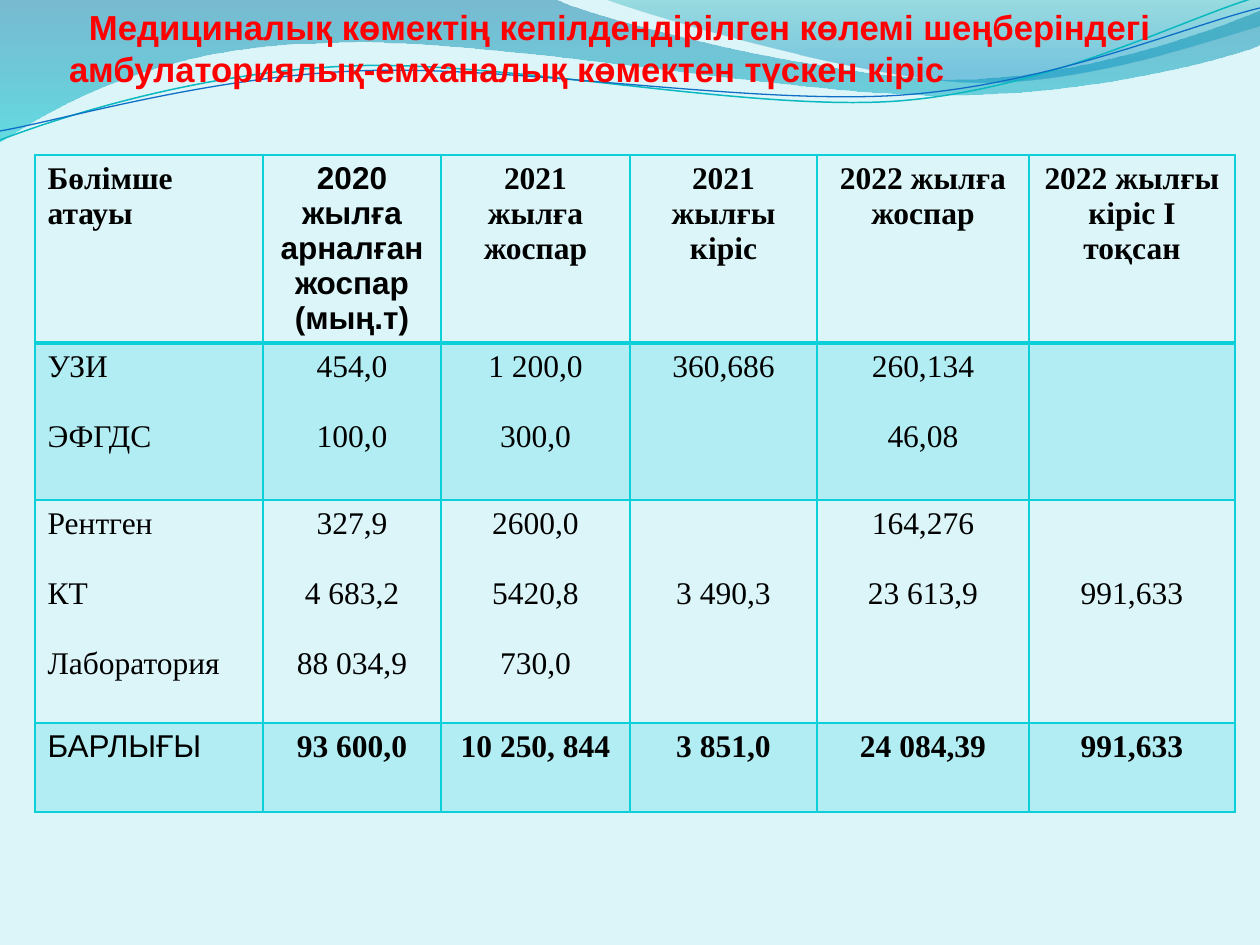
from lxml.etree import SubElement
from pptx import Presentation
from pptx.dml.color import RGBColor
from pptx.enum.text import MSO_ANCHOR, MSO_AUTO_SIZE, PP_ALIGN
from pptx.oxml import parse_xml
from pptx.oxml.ns import nsdecls, qn
from pptx.util import Emu, Pt

PX = 914400 / 126
COLORS = {"bg": "DBF5F9", "title": "FF0000", "text": "000000", "grid": "0BD0D9",
          "teal": "0AB8BF", "blue": "0F6FC6"}


def px(n):
    return Emu(round(n * PX))


def set_opacity(el, percents):
    """Give each colour in el, in order, its opacity in percent."""
    for clr, pct in zip(el.iter(qn("a:srgbClr")), percents):
        SubElement(clr, qn("a:alpha")).set("val", str(pct * 1000))


prs = Presentation()
prs.slide_width, prs.slide_height = px(1260), px(945)
s = prs.slides.add_slide(prs.slide_layouts[5])
s.background.fill.solid()
s.background.fill.fore_color.rgb = RGBColor.from_string(COLORS["bg"])

# Waves: a step of one point is a line, a step of three is a Bezier curve.
# A gradient stop is position, colour, opacity.
waves = [
    {"start": (0, 0), "stops": [(0, "0074A1", 45), (1, "00C6CF", 55)],
     "steps": [[(554, -1)],
               [(600, 21), (837, 79), (955, 79)],
               [(1075, 79), (1207, 33), (1260, 11)],
               [(1261, 45)],
               [(1239, 55), (1096, 96), (940, 95)],
               [(784, 95), (481, 35), (324, 43)],
               [(161, 45), (58, 105), (-1, 142)],
               [(0, 0)]]},
    {"start": (604, -1), "stops": [(0, "00A1A9", 30), (0.8, "008BBF", 45)],
     "steps": [[(641, 14), (859, 78), (969, 82)],
               [(1079, 86), (1211, 40), (1260, 26)],
               [(1260, 0)],
               [(604, -1)]]},
    {"start": (0, 140), "line": ("teal", 0.85),
     "steps": [[(60, 117), (199, 72), (349, 66)],
               [(498, 59), (747, 112), (898, 101)],
               [(1050, 89), (1182, 19), (1257, -3)]]},
    {"start": (0, 131), "line": ("blue", 0.75),
     "steps": [[(59, 121), (207, 77), (357, 71)],
               [(508, 64), (752, 106), (903, 95)],
               [(1053, 84), (1186, 26), (1260, 8)]]},
]
for wave in waves:
    builder = s.shapes.build_freeform(*map(px, wave["start"]))
    builder.add_line_segments([(px(x), px(y)) for step in wave["steps"] for x, y in step],
                              close="stops" in wave)
    sp = builder.convert_to_shape()
    sp.shadow.inherit = False

    # Join the three lines of each curve step into one Bezier segment
    segments = iter(list(sp._element.iter(qn("a:lnTo"))))
    for step in wave["steps"]:
        first, *others = [next(segments) for _ in step]
        if others:
            first.tag = qn("a:cubicBezTo")
        for other in others:
            first.append(other[0])
            other.getparent().remove(other)

    if "stops" in wave:
        sp.fill.gradient()
        sp.fill.gradient_angle = 270
        for stop, (position, color, _) in zip(sp.fill.gradient_stops, wave["stops"]):
            stop.position = position
            stop.color.rgb = RGBColor.from_string(color)
        set_opacity(sp._element.spPr, [opacity for *_, opacity in wave["stops"]])
        sp.line.fill.background()
    else:
        color, width = wave["line"]
        sp.fill.background()
        sp.line.color.rgb = RGBColor.from_string(COLORS[color])
        sp.line.width = Pt(width)

# Title, in front of the waves
title = s.shapes.title
s.shapes._spTree.append(title._element)
title.left, title.top, title.width, title.height = px(69), px(39), px(1103), px(126)
tf = title.text_frame
tf.text = ("Медициналық көмектің кепілдендірілген көлемі шеңберіндегі "
           "амбулаториялық-емханалық көмектен түскен кіріс")
frame_format = {"word_wrap": True, "auto_size": MSO_AUTO_SIZE.NONE,
                "vertical_anchor": MSO_ANCHOR.BOTTOM, "margin_left": 0,
                "margin_right": 0, "margin_top": 0, "margin_bottom": px(75)}
for name, value in frame_format.items():
    setattr(tf, name, value)
p = tf.paragraphs[0]
p.alignment, p.line_spacing = PP_ALIGN.LEFT, Pt(24)
p._p.get_or_add_pPr().set("indent", str(px(20)))
for name, value in {"name": "Arial", "size": Pt(19.8), "bold": True}.items():
    setattr(p.font, name, value)
p.font.color.rgb = RGBColor.from_string(COLORS["title"])

# Table: a list in a cell is one entry per service, "" where there is no value
rows = [
    ["Бөлімше атауы", "2020 жылға арналған жоспар (мың.т)", "2021 жылға жоспар",
     "2021 жылғы кіріс", "2022 жылға жоспар", "2022 жылғы кіріс I тоқсан"],
    [["УЗИ", "ЭФГДС"], ["454,0", "100,0"], ["1 200,0", "300,0"], "360,686",
     ["260,134", "46,08"], ""],
    [["Рентген", "КТ", "Лаборатория"], ["327,9", "4 683,2", "88 034,9"],
     ["2600,0", "5420,8", "730,0"], ["", "3 490,3"], ["164,276", "23 613,9"],
     ["", "991,633"]],
    ["БАРЛЫҒЫ", "93 600,0", "10 250, 844", "3 851,0", "24 084,39", "991,633"],
]
col_widths = [228, 178, 189, 187, 212, 206]
row_heights = [188, 157, 223, 89]
arial_cells = {(0, 1), (3, 0)}
LINE = 35

table = s.shapes.add_table(len(rows), len(col_widths), px(35), px(155),
                           px(sum(col_widths)), px(sum(row_heights))).table
table.first_row = table.horz_banding = False
for col, width in zip(table.columns, col_widths):
    col.width = px(width)
for row, height in zip(table.rows, row_heights):
    row.height = px(height)

for i, row in enumerate(rows):
    for j, content in enumerate(row):
        cell = table.cell(i, j)
        entries = content if isinstance(content, list) else [content]
        if entries[0] == "" and len(entries) > 1:
            cell.margin_top = px(6 + 2 * LINE)
        cell.text = "\n".join(entry for entry in entries if entry)
        for k, p in enumerate(cell.text_frame.paragraphs):
            p.alignment = PP_ALIGN.CENTER if j else PP_ALIGN.LEFT
            p.line_spacing = px(LINE)
            p.space_before = px(LINE if k else 0)
            font_format = {"name": "Arial" if (i, j) in arial_cells else "Times New Roman",
                           "size": Pt(18), "bold": i == 0 or (i == 3 and j > 0)}
            for name, value in font_format.items():
                setattr(p.font, name, value)
            p.font.color.rgb = RGBColor.from_string(COLORS["text"])
        tcPr = cell._tc.get_or_add_tcPr()
        for side in "LRTB":
            thick = (i, side) in ((0, "B"), (1, "T"))
            tcPr.append(parse_xml(
                f'<a:ln{side} {nsdecls("a")} w="{Pt(2 if thick else 1)}"><a:solidFill>'
                f'<a:srgbClr val="{COLORS["grid"]}"/></a:solidFill></a:ln{side}>'))
        if i % 2:
            cell.fill.solid()
            cell.fill.fore_color.rgb = RGBColor.from_string(COLORS["grid"])
            set_opacity(tcPr.find(qn("a:solidFill")), [20])
        else:
            cell.fill.background()

prs.save("out.pptx")
